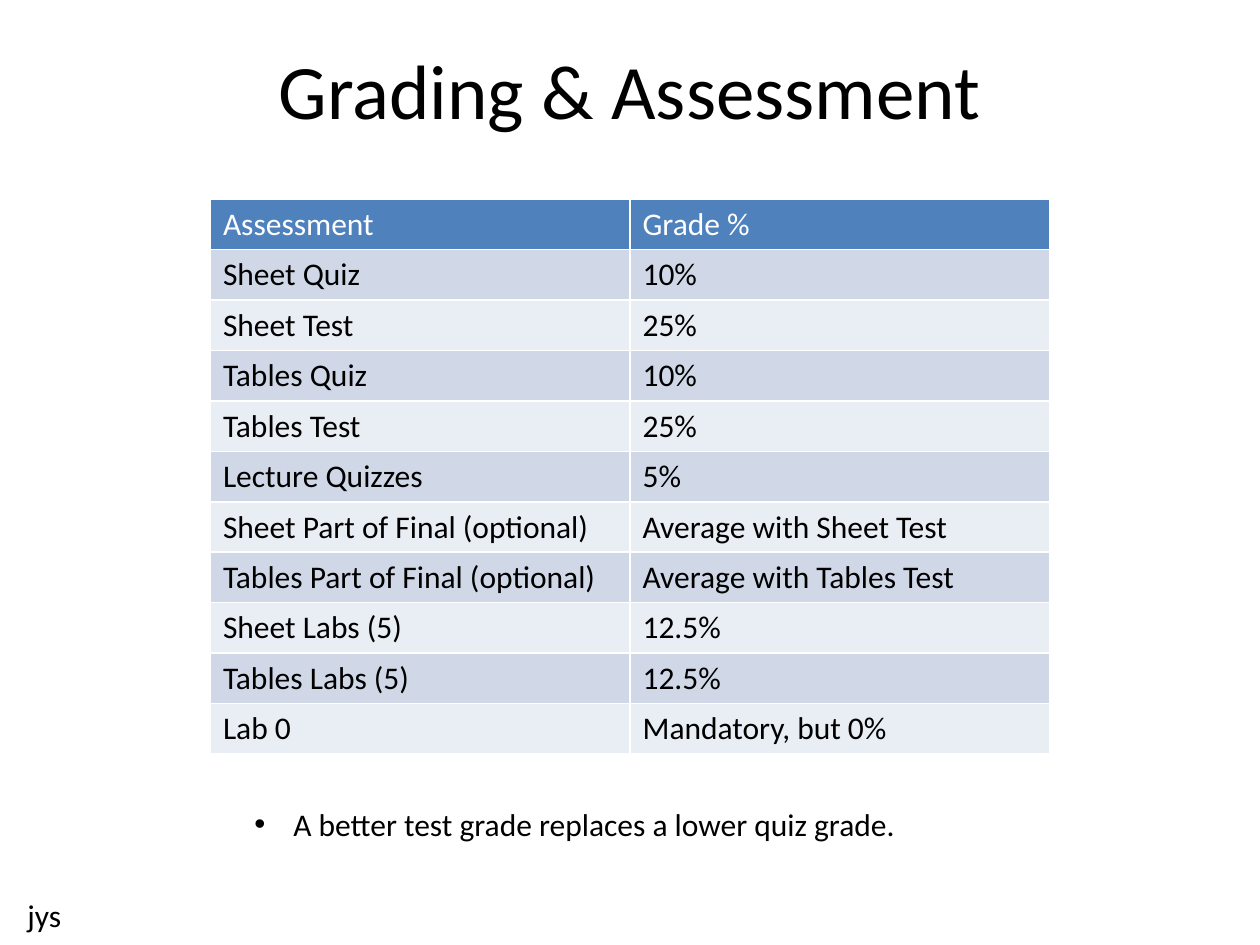
from typing import NamedTuple

from lxml import etree
from pptx import Presentation
from pptx.dml.color import RGBColor
from pptx.enum.text import MSO_ANCHOR, PP_ALIGN
from pptx.oxml.ns import qn
from pptx.util import Inches, Pt

LEFT, CENTER = PP_ALIGN.LEFT, PP_ALIGN.CENTER
TOP, MIDDLE = MSO_ANCHOR.TOP, MSO_ANCHOR.MIDDLE

BLACK = RGBColor(0x00, 0x00, 0x00)
WHITE = RGBColor(0xFF, 0xFF, 0xFF)
HEADER_BLUE = RGBColor(0x4F, 0x81, 0xBD)
BAND_DARK = RGBColor(0xD0, 0xD8, 0xE8)
BAND_LIGHT = RGBColor(0xE9, 0xED, 0xF4)

FONT = "Calibri"
BODY_SIZE = 18
ROW_HEIGHT = 0.4
COLUMN_WIDTH = 3.33
BULLET_INDENT = Inches(0.31)


class Grade(NamedTuple):
    assessment: str
    share: str


class Area(NamedTuple):
    left: float
    top: float
    width: float
    height: float


HEADER = Grade("Assessment", "Grade %")
GRADES = [
    Grade("Sheet Quiz", "10%"),
    Grade("Sheet Test", "25%"),
    Grade("Tables Quiz", "10%"),
    Grade("Tables Test", "25%"),
    Grade("Lecture Quizzes", "5%"),
    Grade("Sheet Part of Final (optional)", "Average with Sheet Test"),
    Grade("Tables Part of Final (optional)", "Average with Tables Test"),
    Grade("Sheet Labs (5)", "12.5%"),
    Grade("Tables Labs (5)", "12.5%"),
    Grade("Lab 0", "Mandatory, but 0%"),
]


def write_text(frame, text: str, *, size: float = BODY_SIZE,
               color: RGBColor = BLACK, align=LEFT, bullet: str = "") -> None:
    para = frame.paragraphs[0]
    para.alignment = align
    span = para.add_run()
    span.text = text
    span.font.name = FONT
    span.font.size = Pt(size)
    span.font.bold = False
    span.font.color.rgb = color
    if bullet:
        properties = para._p.get_or_add_pPr()
        properties.set("marL", str(BULLET_INDENT))
        properties.set("indent", str(-BULLET_INDENT))
        etree.SubElement(properties, qn("a:buFont"), typeface="Arial")
        etree.SubElement(properties, qn("a:buChar"), char=bullet)


def add_text(page, area: Area, text: str, *, anchor=TOP, wrap: bool = True,
             **text_format) -> None:
    box = page.shapes.add_textbox(*map(Inches, area))
    box.text_frame.word_wrap = wrap
    box.text_frame.vertical_anchor = anchor
    write_text(box.text_frame, text, **text_format)


def set_borders(cell, color: RGBColor, width: float) -> None:
    properties = cell._tc.get_or_add_tcPr()
    # Borders come before the fill in the cell properties
    for position, side in enumerate(("a:lnL", "a:lnR", "a:lnT", "a:lnB")):
        line = etree.Element(qn(side), w=str(Pt(width)))
        fill = etree.SubElement(line, qn("a:solidFill"))
        etree.SubElement(fill, qn("a:srgbClr"), val=str(color))
        properties.insert(position, line)


def add_grade_table(page, left: float, top: float) -> None:
    rows = [HEADER, *GRADES]
    columns = len(HEADER)
    table = page.shapes.add_table(
        len(rows), columns, Inches(left), Inches(top),
        Inches(COLUMN_WIDTH * columns), Inches(ROW_HEIGHT * len(rows))).table
    for row_index, grade in enumerate(rows):
        if row_index == 0:
            fill_color, text_color = HEADER_BLUE, WHITE
        else:
            fill_color = BAND_DARK if row_index % 2 else BAND_LIGHT
            text_color = BLACK
        for column_index, text in enumerate(grade):
            cell = table.cell(row_index, column_index)
            cell.fill.solid()
            cell.fill.fore_color.rgb = fill_color
            set_borders(cell, WHITE, 1)
            write_text(cell.text_frame, text, color=text_color)


def main() -> None:
    deck = Presentation()
    deck.slide_width, deck.slide_height = Inches(10), Inches(7.5)
    page = deck.slides.add_slide(deck.slide_layouts[6])

    # Title
    add_text(page, Area(0.5, 0.08, 9, 1.25), "Grading & Assessment",
             size=44, align=CENTER, anchor=MIDDLE)

    # Grade breakdown
    add_grade_table(page, 1.67, 1.58)

    # Remark and author's initials
    add_text(page, Area(1.92, 6.34, 6.25, 0.4),
             "A better test grade replaces a lower quiz grade.", bullet="•")
    add_text(page, Area(0.12, 7.06, 0.47, 0.4), "jys", wrap=False)

    deck.save("out.pptx")


if __name__ == "__main__":
    main()
